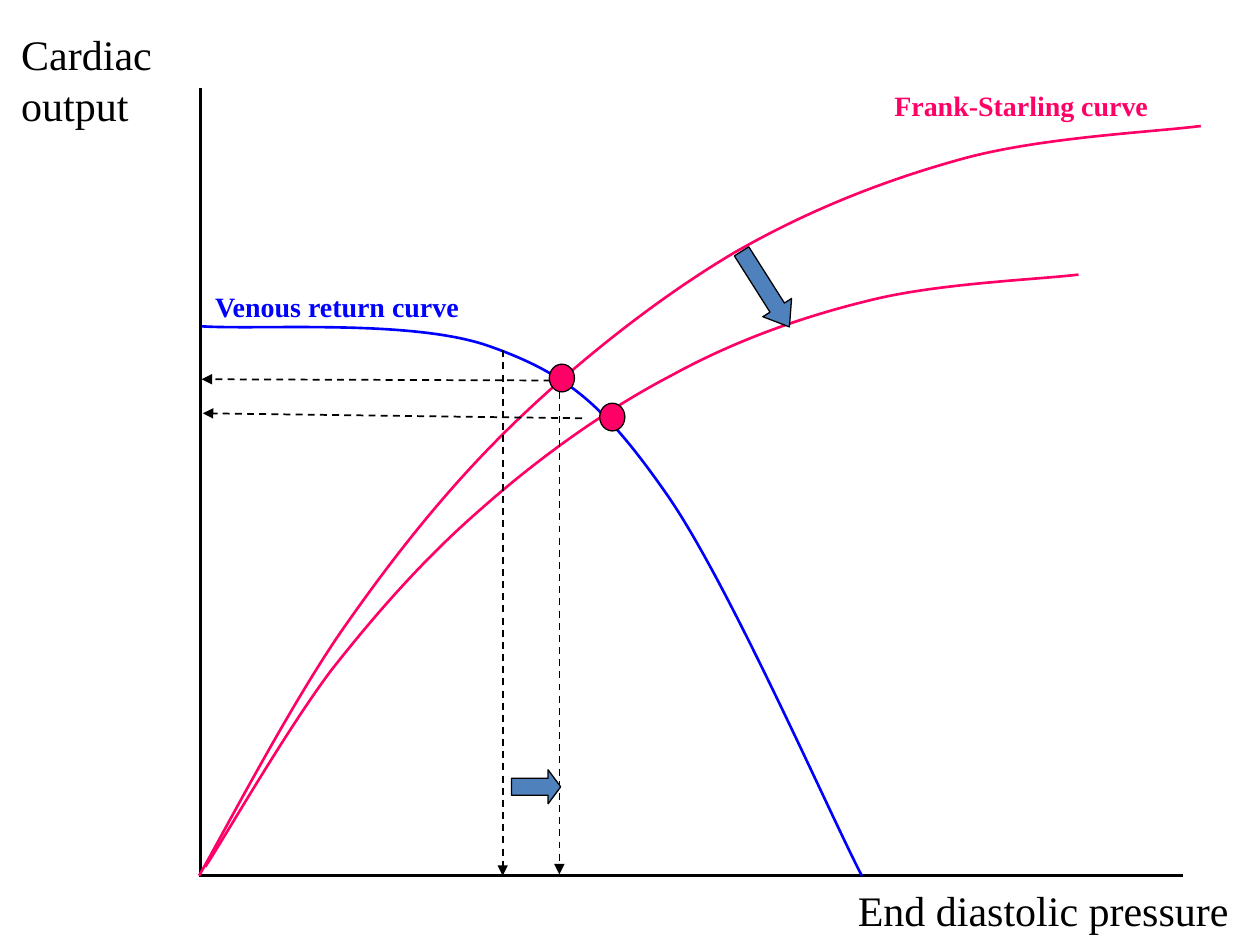
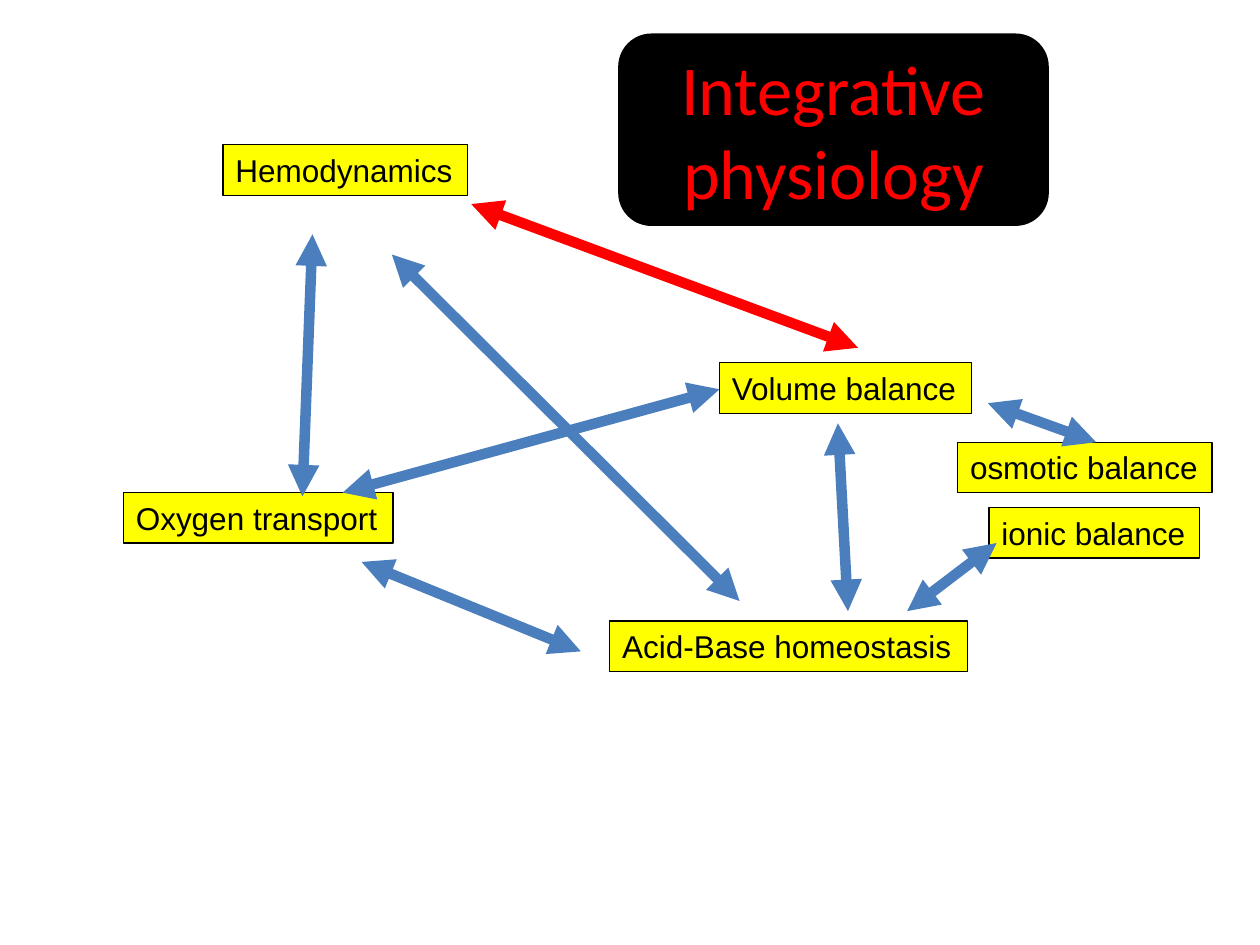
from lxml import etree
from pptx import Presentation
from pptx import util as u
from pptx.dml.color import RGBColor
from pptx.enum import dml, shapes, text
from pptx.oxml.ns import qn

PX = 9144  # 100 px to the inch
HUES = {
    "ink": "000000", "pink": "FF0066", "blue": "0000FF", "steel": "4F81BD",
    "link": "4B7EBC", "red": "FF0000", "yellow": "FFFF00",
}
HUES = {name: RGBColor.from_string(code) for name, code in HUES.items()}
KIND = shapes.MSO_SHAPE


def add_line(slide, ends, hue, width, dash=False, tips=()):
    """Draw a straight line; tips holds headEnd and/or tailEnd, in that order."""
    x1, y1, x2, y2 = [n * PX for n in ends]
    line = slide.shapes.add_connector(shapes.MSO_CONNECTOR.STRAIGHT, x1, y1, x2, y2)
    line.line.color.rgb = HUES[hue]
    line.line.width = u.Pt(width)
    if dash:
        line.line.dash_style = dml.MSO_LINE.DASH
    props = line._element.spPr
    for tip in tips:
        etree.SubElement(props.find(qn("a:ln")), qn("a:" + tip), type="triangle")
    etree.SubElement(props, qn("a:effectLst"))


def add_box(slide, kind, place, fill=None, words="", font="Arial", size=18,
            hue="ink", bold=False, wrap=False, edge=0.75):
    """Add a preset shape, or a plain text box when kind is None."""
    place = [n * PX for n in place]
    if kind is None:
        box = slide.shapes.add_textbox(*place)
    else:
        box = slide.shapes.add_shape(kind, *place)
        box.shadow.inherit = False
        box.fill.solid()
        box.fill.fore_color.rgb = HUES[fill]
        box.line.color.rgb = HUES["ink"]
        box.line.width = u.Pt(edge)
    if words:
        frame = box.text_frame
        frame.text = words
        frame.word_wrap = wrap
        frame.auto_size = text.MSO_AUTO_SIZE.SHAPE_TO_FIT_TEXT
        frame.vertical_anchor = text.MSO_ANCHOR.TOP
        para = frame.paragraphs[0]
        para.alignment = text.PP_ALIGN.LEFT
        face = para.runs[0].font
        face.name, face.size, face.bold = font, u.Pt(size), bold
        face.color.rgb = HUES[hue]
    return box


deck = Presentation()
deck.slide_width, deck.slide_height = 1000 * PX, 750 * PX

# Slide 1: cardiac output against end diastolic pressure
graph = deck.slides.add_slide(deck.slide_layouts[6])
for axis in [(159, 70, 159, 695), (158, 695, 939, 695)]:
    add_line(graph, axis, "ink", 1.5)

# Each curve: a start point, then three Bezier points per segment
curves = [
    ("pink", [(158, 695), (177, 662), (231, 558), (273, 498),
              (315, 438), (358, 384), (410, 334), (461, 285), (523, 236), (582, 201),
              (641, 167), (702, 143), (764, 126), (826, 109), (913, 105), (953, 100)]),
    ("blue", [(684, 695), (658, 645), (578, 462), (529, 392),
              (480, 322), (451, 297), (389, 275), (328, 253), (208, 262), (160, 259)]),
    ("pink", [(163, 688), (180, 662), (227, 580), (263, 532),
              (300, 485), (338, 442), (383, 403), (427, 364), (481, 325), (533, 298),
              (584, 270), (638, 251), (692, 238), (745, 225), (822, 222), (856, 218)]),
]
for hue, points in curves:
    pen = graph.shapes.build_freeform(*points[0], scale=PX)
    pen.add_line_segments(points[1:], close=False)
    curve = pen.convert_to_shape()
    curve.shadow.inherit = False
    curve.fill.background()
    curve.line.color.rgb = HUES[hue]
    curve.line.width = u.Pt(1.5)
    track = next(curve._element.iter(qn("a:path")))
    steps = track.findall(qn("a:lnTo"))
    for i in range(0, len(steps), 3):
        bend = etree.SubElement(track, qn("a:cubicBezTo"))
        for step in steps[i:i + 3]:
            bend.append(step[0])
            track.remove(step)

guides = [(444, 311, 444, 694), (437, 302, 160, 301),
          (399, 278, 399, 695), (462, 332, 161, 328)]
for guide in guides:
    add_line(graph, guide, "ink", 1, dash=True, tips=["tailEnd"])
for x, y in [(436, 289), (476, 320)]:
    add_box(graph, KIND.OVAL, (x, y, 20, 22), "pink")
for place, turn, tip in [((572, 216, 71, 27), 57.6, 0.67), ((406, 611, 39, 27), 0, 0.37)]:
    arrow = add_box(graph, KIND.RIGHT_ARROW, place, "steel")
    arrow.rotation = turn
    arrow.adjustments[1] = tip

labels = [
    ("Venous return curve", (161, 225, 216, 37), 16, "blue", True, False),
    ("Frank-Starling curve", (700, 65, 224, 37), 16, "pink", True, False),
    ("Cardiac output", (7, 18, 131, 91), 24, "ink", False, True),
    ("End diastolic pressure", (671, 697, 317, 51), 24, "ink", False, False),
]
for words, place, size, hue, bold, wrap in labels:
    add_box(graph, None, place, None, words, "Times New Roman", size, hue, bold, wrap)

# Slide 2: links between the physiological systems
web = deck.slides.add_slide(deck.slide_layouts[5])
topics = [
    ("Hemodynamics", 177, 115, 194),
    ("Volume balance", 571, 288, 200),
    ("Oxygen transport", 98, 391, 214),
    ("Acid-Base homeostasis", 484, 493, 284),
    ("osmotic balance", 760, 351, 202),
    ("ionic balance", 785, 403, 167),
]
for words, x, y, width in topics:
    add_box(web, KIND.RECTANGLE, (x, y, width, 40), "yellow", words)

links = [
    (311, 202, 587, 477, "link"),
    (571, 309, 272, 391, "link"),
    (374, 162, 681, 276, "red"),
    (248, 186, 240, 394, "link"),
    (461, 517, 287, 446, "link"),
    (673, 485, 665, 336, "link"),
    (870, 351, 784, 320, "link"),
    (791, 431, 720, 485, "link"),
]
for *ends, hue in links:
    add_line(web, ends, hue, 6, tips=["headEnd", "tailEnd"])

plate = add_box(web, KIND.ROUNDED_RECTANGLE, (492, 28, 339, 150), "ink", edge=2)
title = web.shapes.title
web.shapes._spTree.append(title._element)  # bring the title in front of its plate
title.left, title.top = plate.left, plate.top
title.width, title.height = plate.width, plate.height
frame = title.text_frame
frame.text = "Integrative physiology"
frame.word_wrap = True
frame.auto_size = text.MSO_AUTO_SIZE.NONE
frame.vertical_anchor = text.MSO_ANCHOR.MIDDLE
frame.paragraphs[0].alignment = text.PP_ALIGN.CENTER
face = frame.paragraphs[0].runs[0].font
face.name, face.size = "Calibri", u.Pt(40)
face.color.rgb = HUES["red"]

deck.save("out.pptx")
